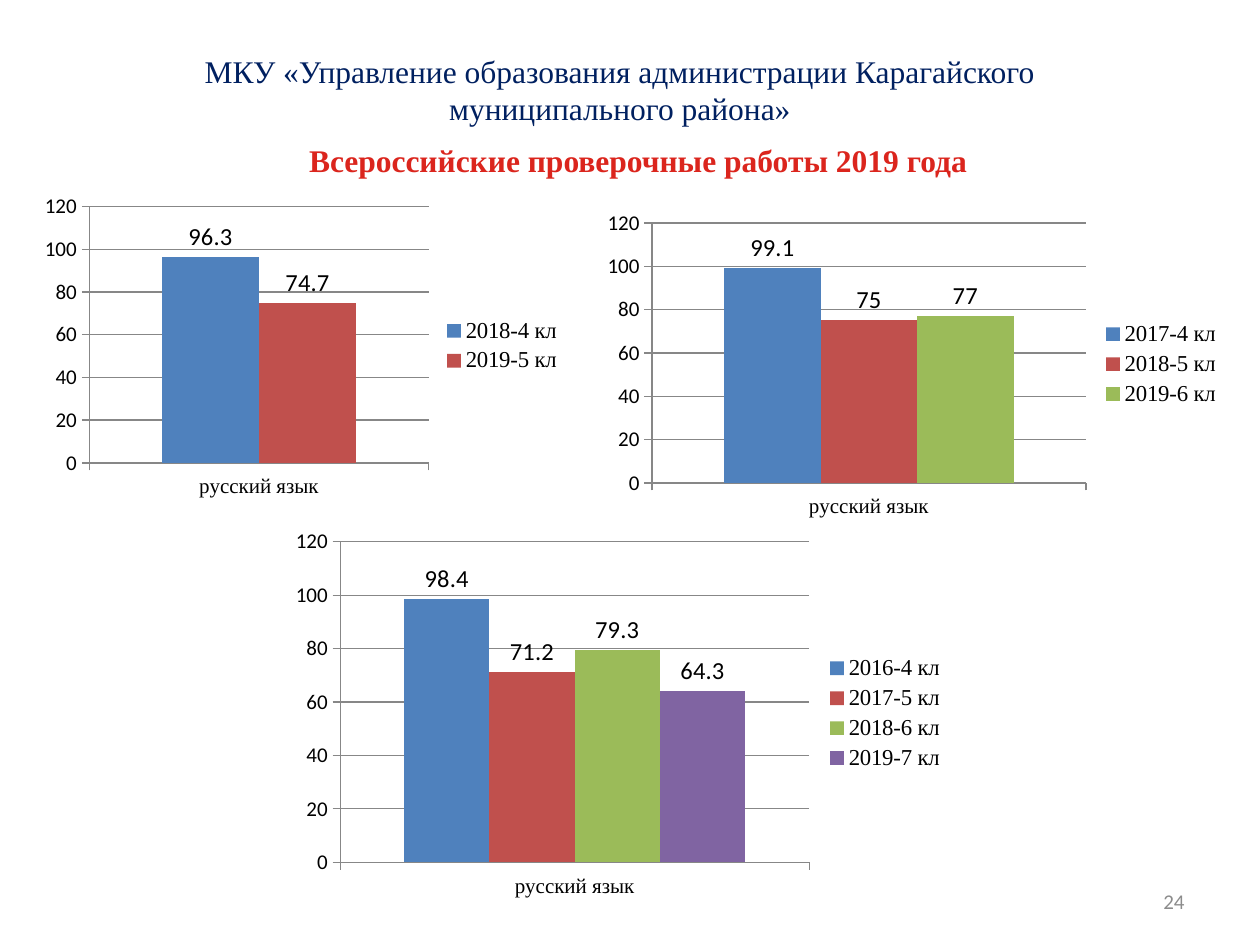
from dataclasses import dataclass

from pptx import Presentation
from pptx.chart.data import CategoryChartData
from pptx.dml.color import RGBColor
from pptx.enum.chart import (XL_CHART_TYPE, XL_LABEL_POSITION,
                             XL_LEGEND_POSITION, XL_TICK_MARK)
from pptx.enum.text import MSO_ANCHOR, PP_ALIGN
from pptx.util import Inches, Pt


@dataclass(frozen=True)
class Theme:
    serif: str = "Times New Roman"
    sans: str = "Calibri"
    navy: str = "002060"
    red: str = "DB251D"
    grey: str = "8C8C8C"
    black: str = "000000"
    axis: str = "878787"
    series: tuple = ("4F81BD", "C0504D", "9BBB59", "8064A2")
    heading: int = 18
    label: int = 14
    legend: int = 13
    small: int = 12


THEME = Theme()
SUBJECT = "русский язык"
CHARTS = [
    ((2.24, 4.14, 5.36, 3.04),
     {"2016-4 кл": 98.4, "2017-5 кл": 71.2, "2018-6 кл": 79.3, "2019-7 кл": 64.3}),
    ((0.27, 1.49, 4.29, 2.51), {"2018-4 кл": 96.3, "2019-5 кл": 74.7}),
    ((4.72, 1.62, 5.07, 2.54),
     {"2017-4 кл": 99.1, "2018-5 кл": 75, "2019-6 кл": 77}),
]


def set_font(font, name, size, color, bold=False):
    for key, value in {"name": name, "size": Pt(size), "bold": bold}.items():
        setattr(font, key, value)
    font.color.rgb = RGBColor.from_string(color)


def place(sp, box):
    for key, value in zip(("left", "top", "width", "height"), box):
        setattr(sp, key, Inches(value))


def write(sp, text, align, anchor, **font):
    tf = sp.text_frame
    tf.word_wrap = True
    tf.vertical_anchor = anchor
    p = tf.paragraphs[0]
    p.alignment = align
    r = p.add_run()
    r.text = text
    set_font(r.font, **font)


def add_text(s, box, text, align, anchor=MSO_ANCHOR.TOP, **font):
    sp = s.shapes.add_textbox(*map(Inches, box))
    write(sp, text, align, anchor, **font)


def add_title(s, box, text):
    place(s.shapes.title, box)
    write(s.shapes.title, text, PP_ALIGN.CENTER, MSO_ANCHOR.TOP, name=THEME.serif,
          size=THEME.heading, color=THEME.red, bold=True)


def format_axis(axis, font_name):
    axis.major_tick_mark = XL_TICK_MARK.OUTSIDE
    axis.minor_tick_mark = XL_TICK_MARK.NONE
    set_font(axis.tick_labels.font, font_name, THEME.small, THEME.black)
    lines = [axis.format.line]
    if axis.has_major_gridlines:
        lines.append(axis.major_gridlines.format.line)
    for line in lines:
        line.color.rgb = RGBColor.from_string(THEME.axis)
        line.width = Pt(0.75)


def add_results_chart(s, box, results):
    data = CategoryChartData()
    data.categories = [SUBJECT]
    for name, value in results.items():
        data.add_series(name, [value])
    chart = s.shapes.add_chart(XL_CHART_TYPE.COLUMN_CLUSTERED,
                               *map(Inches, box), data).chart
    set_font(chart.font, THEME.sans, THEME.heading, THEME.black)
    chart.has_title = False
    chart.has_legend = True
    chart.legend.position = XL_LEGEND_POSITION.RIGHT
    chart.legend.include_in_layout = False
    set_font(chart.legend.font, THEME.serif, THEME.legend, THEME.black)

    chart.value_axis.has_major_gridlines = True
    format_axis(chart.value_axis, THEME.sans)
    format_axis(chart.category_axis, THEME.serif)

    plot = chart.plots[0]
    plot.gap_width = 150
    plot.overlap = 0
    plot.vary_by_categories = False
    for series, color in zip(plot.series, THEME.series):
        series.format.fill.solid()
        series.format.fill.fore_color.rgb = RGBColor.from_string(color)
        labels = series.data_labels
        labels.show_value = True
        labels.position = XL_LABEL_POSITION.OUTSIDE_END
        set_font(labels.font, THEME.sans, THEME.label, THEME.black)


def main():
    prs = Presentation()
    prs.slide_width, prs.slide_height = Inches(10), Inches(7.5)
    s = prs.slides.add_slide(prs.slide_layouts[5])
    add_text(s, (1.06, 0.36, 7.72, 0.71),
             "МКУ «Управление образования администрации Карагайского "
             "муниципального района»", PP_ALIGN.CENTER,
             name=THEME.serif, size=THEME.heading, color=THEME.navy)
    add_title(s, (0.69, 1.07, 8.75, 0.4),
              "Всероссийские проверочные работы 2019 года")
    add_text(s, (7.17, 6.95, 2.33, 0.4), "24", PP_ALIGN.RIGHT, MSO_ANCHOR.MIDDLE,
             name=THEME.sans, size=THEME.small, color=THEME.grey)
    for box, results in CHARTS:
        add_results_chart(s, box, results)
    prs.save("out.pptx")


if __name__ == "__main__":
    main()
